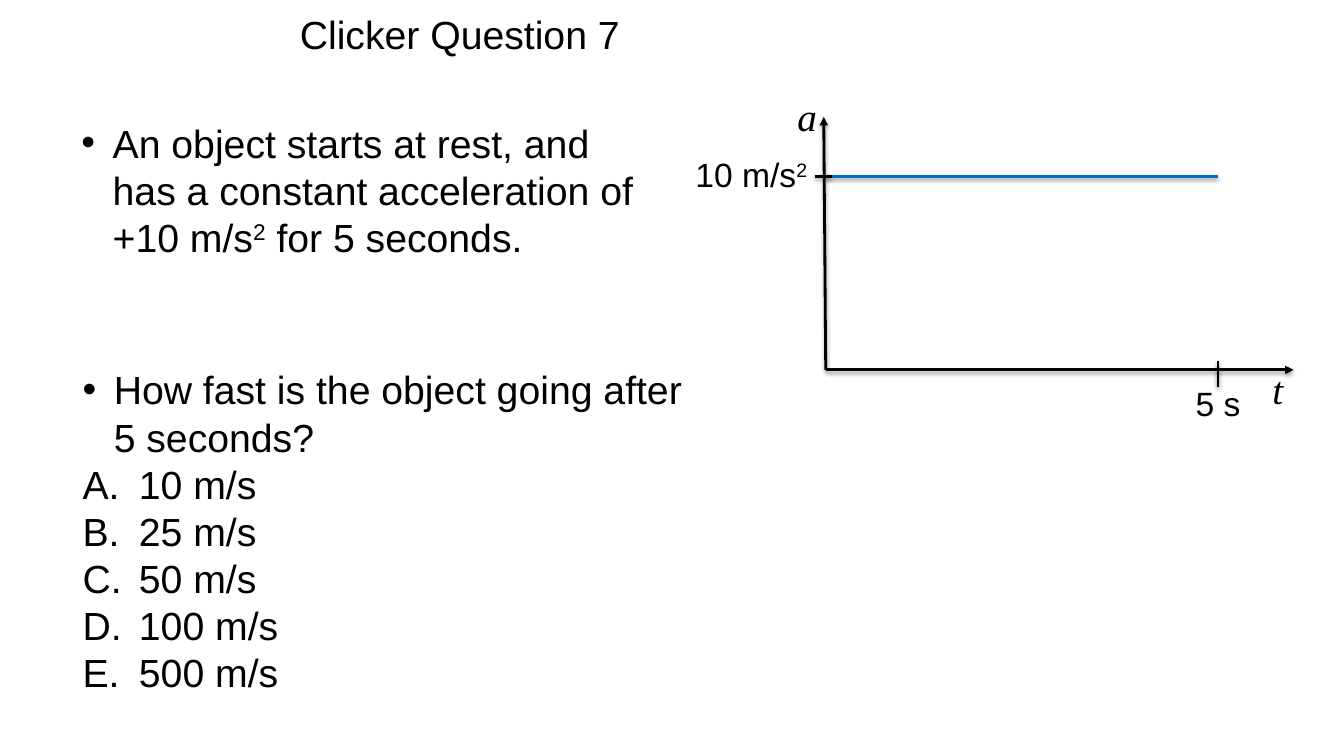
from lxml.etree import SubElement
from pptx import Presentation
from pptx.dml.color import RGBColor
from pptx.enum.shapes import MSO_CONNECTOR
from pptx.enum.text import MSO_AUTO_SIZE, PP_ALIGN
from pptx.oxml.ns import qn
from pptx.util import Pt

EMU_PER_PX = 9144


def px(length):
    return length * EMU_PER_PX


def color(value):
    return RGBColor.from_string(value)


class Board:
    ink = "000000"
    body_font = "Arial"
    symbol_font = "Times New Roman"
    body_size = 28
    label_size = 24
    line_width = 2

    def __init__(self, slide):
        self.slide = slide

    def line(self, start, end, stroke=ink, arrow=False):
        line = self.slide.shapes.add_connector(
            MSO_CONNECTOR.STRAIGHT, *map(px, start + end))
        line.line.color.rgb = color(stroke)
        line.line.width = Pt(self.line_width)
        if arrow:
            SubElement(line.line._get_or_add_ln(), qn("a:tailEnd"), type="triangle")
        effects = SubElement(line._element.spPr, qn("a:effectLst"))
        shadow = SubElement(effects, qn("a:outerShdw"), blurRad=str(Pt(3.1)),
                            dist=str(Pt(1.6)), dir="5400000", rotWithShape="0")
        shade = SubElement(shadow, qn("a:srgbClr"), val=self.ink)
        SubElement(shade, qn("a:alpha"), val="38000")

    def text(self, area, paragraphs, size=body_size, font=body_font,
             wrap=True, italic=False, align=PP_ALIGN.LEFT):
        box = self.slide.shapes.add_textbox(*map(px, area))
        frame = box.text_frame
        frame.word_wrap = wrap
        frame.auto_size = MSO_AUTO_SIZE.NONE
        for index, pieces in enumerate(paragraphs):
            para = frame.paragraphs[0] if index == 0 else frame.add_paragraph()
            para.alignment = align
            for position, piece in enumerate(pieces):
                span = para.add_run()
                span.text = piece
                span.font.size = Pt(size)
                span.font.name = font
                span.font.italic = italic
                span.font.color.rgb = color(self.ink)
                if position == 1:
                    span._r.get_or_add_rPr().set("baseline", "30000")
        return frame.paragraphs

    def bullet(self, para, indent, tag, **settings):
        properties = para._p.get_or_add_pPr()
        properties.set("marL", str(px(indent)))
        properties.set("indent", str(px(-indent)))
        SubElement(properties, qn("a:buFont"), typeface=self.body_font)
        SubElement(properties, qn(tag), **settings)

    def dot(self, para):
        self.bullet(para, 31, "a:buChar", char="•")

    def letter(self, para):
        self.bullet(para, 56, "a:buAutoNum", type="alphaUcPeriod")


def main():
    deck = Presentation()
    deck.slide_width, deck.slide_height = px(1333), px(750)
    board = Board(deck.slides.add_slide(deck.slide_layouts[6]))

    origin = (819, 367)
    board.line(origin, (817, 116), arrow=True)
    board.line(origin, (1283, 367), arrow=True)
    for symbol, area in (("a", (781, 87, 40, 57)), ("t", (1252, 358, 31, 57))):
        board.text(area, [[symbol]], font=board.symbol_font, wrap=False, italic=True)

    board.line((819, 175), (1208, 175), stroke="0070C0")
    board.text((680, 148, 134, 50), [["10 m/s", "2"]], size=board.label_size, wrap=False)
    board.line((808, 175), (825, 175))
    board.line((1208, 358), (1208, 384))
    board.text((1176, 375, 65, 50), [["5 s"]], size=board.label_size, wrap=False)

    premise = board.text((71, 113, 587, 151), [[
        "An object starts at rest, and has a constant acceleration of +10 m/s",
        "2", " for 5 seconds."]])
    board.dot(premise[0])

    speeds = (10, 25, 50, 100, 500)
    question, *answers = board.text(
        (72, 358, 615, 340),
        [["How fast is the object going after 5 seconds?"]]
        + [[f"{speed} m/s"] for speed in speeds])
    board.dot(question)
    for answer in answers:
        board.letter(answer)

    board.text((181, 5, 550, 58), [["Clicker Question 7"]], align=PP_ALIGN.CENTER)
    deck.save("out.pptx")


if __name__ == "__main__":
    main()
